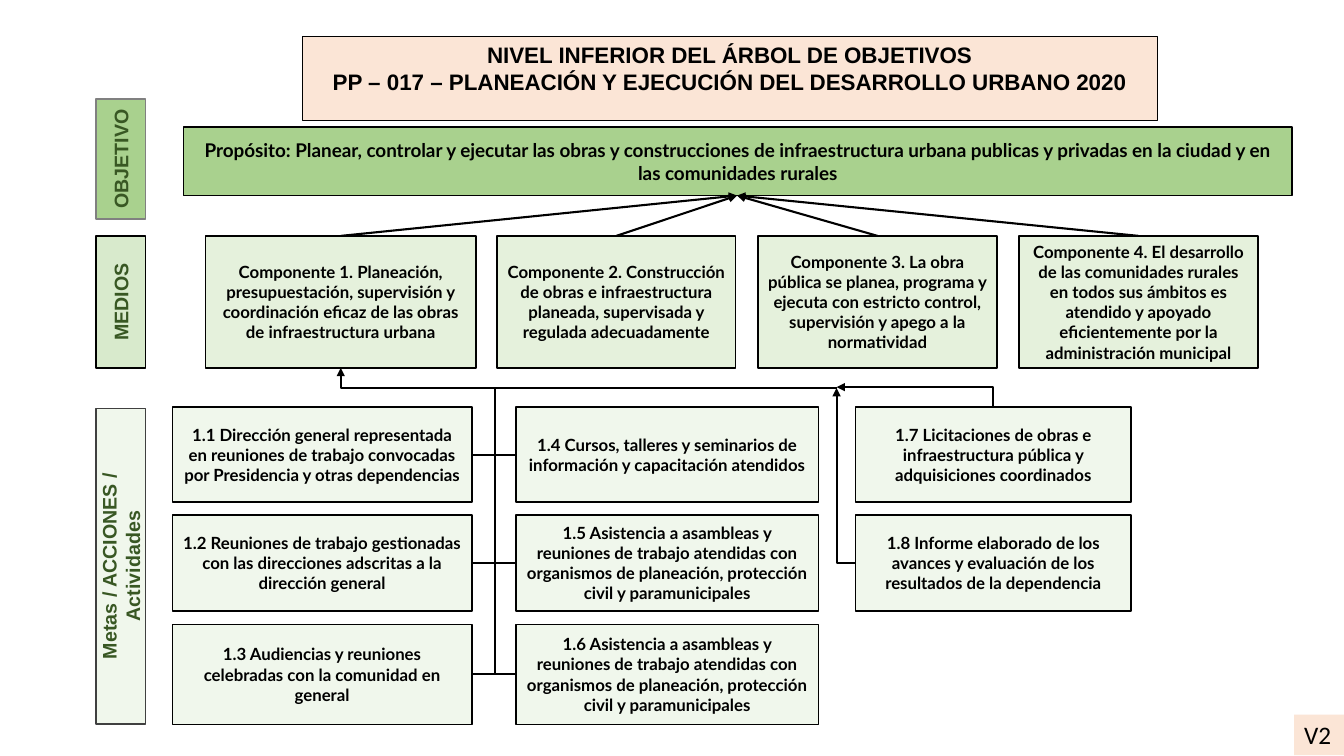
from dataclasses import dataclass
from typing import Optional

from lxml import etree
from pptx import Presentation
from pptx.dml.color import RGBColor
from pptx.enum.shapes import MSO_CONNECTOR, MSO_SHAPE
from pptx.enum.text import MSO_ANCHOR, MSO_AUTO_SIZE, PP_ALIGN
from pptx.oxml.ns import qn
from pptx.util import Pt

PROCESS = MSO_SHAPE.FLOWCHART_PROCESS
RECTANGLE = MSO_SHAPE.RECTANGLE
STRAIGHT = MSO_CONNECTOR.STRAIGHT
ELBOW = MSO_CONNECTOR.ELBOW
CENTER = PP_ALIGN.CENTER
LEFT = PP_ALIGN.LEFT
MIDDLE = MSO_ANCHOR.MIDDLE
TOP = MSO_ANCHOR.TOP

BLACK = "000000"
GREEN = "A9D18E"
PALE_GREEN = "C5E0B4"
DARK_GREEN = "385723"
PEACH = "FBE5D6"

TITLE = [
    "NIVEL INFERIOR DEL ÁRBOL DE OBJETIVOS",
    "PP – 017 – PLANEACIÓN Y EJECUCIÓN DEL DESARROLLO URBANO 2020",
]
COMPONENTS = [
    "Componente 1. Planeación, presupuestación, supervisión y coordinación eficaz de las obras de infraestructura urbana",
    "Componente 2. Construcción de obras e infraestructura planeada, supervisada y regulada adecuadamente",
    "Componente 3. La obra pública se planea, programa y ejecuta con estricto control, supervisión y apego a la normatividad",
    "Componente 4. El desarrollo de las comunidades rurales en todos sus ámbitos es atendido y apoyado eficientemente por la administración municipal",
]
ACTIVITIES = [
    [
        "1.1 Dirección general representada en reuniones de trabajo convocadas por Presidencia y otras dependencias",
        "1.2 Reuniones de trabajo gestionadas con las direcciones adscritas a la dirección general",
        "1.3 Audiencias y reuniones celebradas con la comunidad en general",
    ],
    [
        "1.4 Cursos, talleres y seminarios de información y capacitación atendidos",
        "1.5 Asistencia a asambleas y reuniones de trabajo atendidas con organismos de planeación, protección civil y paramunicipales",
        "1.6 Asistencia a asambleas y reuniones de trabajo atendidas con organismos de planeación, protección civil y paramunicipales",
    ],
    [
        "1.7 Licitaciones de obras e infraestructura pública y adquisiciones coordinados",
        "1.8 Informe elaborado de los avances y evaluación de los resultados de la dependencia",
    ],
]

COMPONENT_TOP, COMPONENT_HEIGHT = 168.5, 94.3
COMPONENT_SPANS = [(146.9, 193)] + [(355 + 186.5 * index, 170.6) for index in range(3)]
COLUMNS = [(123.1, 214), (368.6, 216), (611.3, 196.6)]
ROWS = [(290.7, 68), (367.9, 68.4), (446, 71.3)]
PURPOSE_ARROW = (526.5, 139.7)
TRUNK_X, TRUNK_TOP, BRANCH_X = 353.5, 277.2, 597.6


@dataclass
class Box:
    text: str
    left: float
    top: float
    width: float
    height: float
    fill: str
    opacity: int = 100
    line: Optional[str] = BLACK
    font: str = "Lato"
    size: float = 12
    bold: bool = True
    color: str = BLACK
    align: PP_ALIGN = CENTER
    anchor: MSO_ANCHOR = MIDDLE
    geometry: MSO_SHAPE = PROCESS
    vertical: bool = False


@dataclass
class Link:
    start: tuple[float, float]
    end: tuple[float, float]
    kind: MSO_CONNECTOR = STRAIGHT
    arrow: Optional[str] = None


def rgb(value: str) -> RGBColor:
    return RGBColor.from_string(value)


def apply(target, values: dict) -> None:
    for name, value in values.items():
        setattr(target, name, value)


def write_text(shape, lines: list[str], box: Box) -> None:
    frame = shape.text_frame
    apply(frame, {"word_wrap": True, "vertical_anchor": box.anchor,
                  "margin_left": Pt(7.2), "margin_right": Pt(7.2),
                  "margin_top": Pt(3.6), "margin_bottom": Pt(3.6)})
    for index, line in enumerate(lines):
        paragraph = frame.add_paragraph() if index else frame.paragraphs[0]
        paragraph.alignment = box.align
        run = paragraph.add_run()
        run.text = line
        apply(run.font, {"name": box.font, "size": Pt(box.size), "bold": box.bold})
        run.font.color.rgb = rgb(box.color)


def style_box(shape, box: Box) -> None:
    width, height = (box.height, box.width) if box.vertical else (box.width, box.height)
    apply(shape, {"left": Pt(box.left + (box.width - width) / 2),
                  "top": Pt(box.top + (box.height - height) / 2),
                  "width": Pt(width), "height": Pt(height),
                  "rotation": 270 if box.vertical else 0})
    shape.fill.solid()
    shape.fill.fore_color.rgb = rgb(box.fill)
    if box.opacity < 100:
        color = shape._element.spPr.find(qn("a:solidFill"))[0]
        etree.SubElement(color, qn("a:alpha")).set("val", str(box.opacity * 1000))
    if box.line:
        shape.line.color.rgb = rgb(box.line)
        shape.line.width = Pt(1)
    else:
        shape.line.fill.background()
    write_text(shape, box.text.split("\n"), box)


def draw_box(slide, box: Box) -> None:
    shape = slide.shapes.add_shape(box.geometry, 0, 0, Pt(1), Pt(1))
    shape.shadow.inherit = False
    style_box(shape, box)


def draw_link(slide, link: Link) -> None:
    ends = [Pt(value) for value in (*link.start, *link.end)]
    connector = slide.shapes.add_connector(link.kind, *ends)
    connector.line.color.rgb = rgb(BLACK)
    connector.line.width = Pt(1.5)
    properties = connector._element.spPr
    if link.kind == ELBOW:
        properties.find(qn("a:prstGeom")).set("prst", "bentConnector2")
    if link.arrow:
        outline = properties.find(qn("a:ln"))
        etree.SubElement(outline, qn(f"a:{link.arrow}")).set("type", "triangle")
    etree.SubElement(properties, qn("a:effectLst"))


def build_boxes() -> list[Box]:
    label = {"left": 68.5, "width": 35.3, "font": "Arial", "size": 14,
             "color": DARK_GREEN, "vertical": True}
    boxes = [
        Box("OBJETIVO", top=70.6, height=85.7, fill=GREEN, line="808080", **label),
        Box("MEDIOS", top=COMPONENT_TOP, height=COMPONENT_HEIGHT, fill=GREEN, opacity=45, **label),
        Box("Metas / ACCIONES / Actividades", top=291.6, height=225.4,
            fill=PALE_GREEN, opacity=25, line="404040", **label),
        Box("Propósito: Planear, controlar y ejecutar las obras y construcciones de infraestructura urbana publicas y privadas en la ciudad y en las comunidades rurales",
            131, 90.7, 792, 49, GREEN, size=13.5),
        Box("V2", 924.5, 510.5, 35.5, 29, PEACH, line=None, font="Calibri", size=18,
            bold=False, align=LEFT, anchor=TOP, geometry=RECTANGLE),
    ]
    for text, (left, width) in zip(COMPONENTS, COMPONENT_SPANS):
        boxes.append(Box(text, left, COMPONENT_TOP, width, COMPONENT_HEIGHT, GREEN, 30))
    for texts, (left, width) in zip(ACTIVITIES, COLUMNS):
        for text, (top, height) in zip(texts, ROWS):
            boxes.append(Box(text, left, top, width, height, PALE_GREEN, 25))
    return boxes


def build_links() -> list[Link]:
    component_centers = [left + width / 2 for left, width in COMPONENT_SPANS]
    row_centers = [top + height / 2 for top, height in ROWS]
    first_left, first_width = COLUMNS[0]
    third_left, third_width = COLUMNS[2]
    links = [Link((x, COMPONENT_TOP), PURPOSE_ARROW, arrow="tailEnd") for x in component_centers]
    links += [Link((COLUMNS[1][0], y), (first_left + first_width, y)) for y in row_centers]
    links += [
        Link((TRUNK_X, TRUNK_TOP), (TRUNK_X, row_centers[-1])),
        Link((BRANCH_X, TRUNK_TOP), (component_centers[0], COMPONENT_TOP + COMPONENT_HEIGHT),
             ELBOW, "tailEnd"),
        Link((third_left, row_centers[1]), (BRANCH_X, TRUNK_TOP), ELBOW, "tailEnd"),
        Link((BRANCH_X, 276.5), (third_left + third_width / 2, ROWS[0][0]), ELBOW, "headEnd"),
    ]
    return links


def main() -> None:
    presentation = Presentation()
    apply(presentation, {"slide_width": Pt(960), "slide_height": Pt(540)})
    slide = presentation.slides.add_slide(presentation.slide_layouts[5])
    title = slide.shapes.title
    style_box(title, Box("\n".join(TITLE), 216, 26, 610.6, 46, PEACH,
                         font="Arial", size=16, anchor=TOP))
    title.line.width = Pt(0.75)
    title.text_frame.auto_size = MSO_AUTO_SIZE.SHAPE_TO_FIT_TEXT
    for box in build_boxes():
        draw_box(slide, box)
    for link in build_links():
        draw_link(slide, link)
    presentation.save("out.pptx")


if __name__ == "__main__":
    main()
